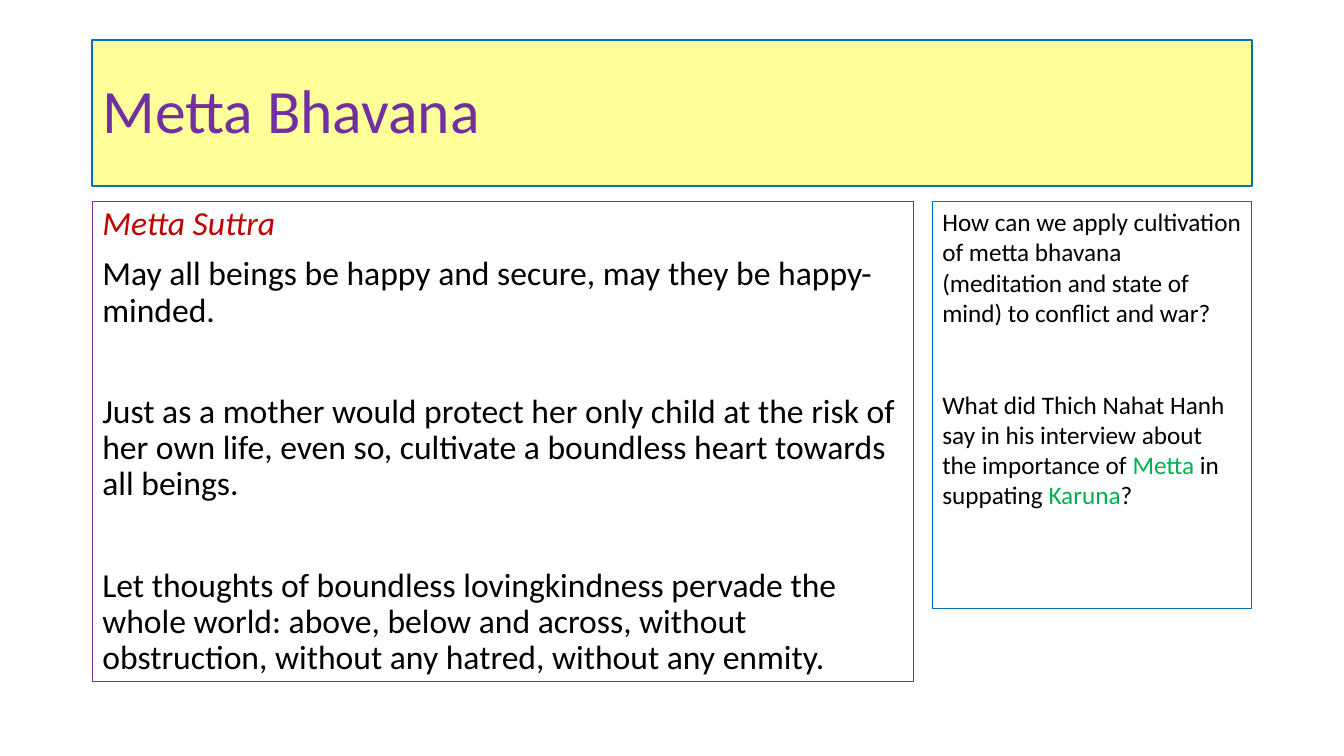
from dataclasses import dataclass

from pptx import Presentation
from pptx.dml.color import RGBColor
from pptx.enum.text import MSO_ANCHOR
from pptx.util import Inches, Pt


@dataclass(frozen=True)
class Theme:
    font: str = "Calibri"
    title_size: int = 44
    body_size: int = 24
    side_size: int = 18
    black: str = "000000"
    purple: str = "7030A0"
    blue: str = "0070C0"
    red: str = "C00000"
    green: str = "00B050"
    yellow: str = "FFFF99"


THEME = Theme()
COLUMNS, ROWS = 160, 90
LEFT, SIDE_LEFT, CONTENT_TOP = 11, 111, 24
SIDE_WIDTH = 38
FULL_WIDTH = SIDE_LEFT + SIDE_WIDTH - LEFT
LINE_SPACING = 0.9
PARAGRAPH_GAP, VERSE_GAP, QUESTION_GAP = 10, 46.4, 44

VERSES = [
    ("May all beings be happy and secure, may they be happy-minded.",
     PARAGRAPH_GAP),
    ("Just as a mother would protect her only child at the risk of her own "
     "life, even so, cultivate a boundless heart towards all beings.",
     VERSE_GAP),
    ("Let thoughts of boundless lovingkindness pervade the whole world: "
     "above, below and across, without obstruction, without any hatred, "
     "without any enmity.", VERSE_GAP),
]
FIRST_QUESTION = ("How can we apply cultivation of metta bhavana (meditation "
                  "and state of mind) to conflict and war?")
SECOND_QUESTION = [
    ("What did Thich Nahat Hanh say in his interview about the importance of ",
     THEME.black),
    ("Metta", THEME.green),
    (" in suppating ", THEME.black),
    ("Karuna", THEME.green),
    ("?", THEME.black),
]


def add_panel(slide, prs, left, top, width, height, line, weight=0.75):
    """Add an outlined text box placed in grid columns and rows."""
    col, row = prs.slide_width / COLUMNS, prs.slide_height / ROWS
    sp = slide.shapes.add_textbox(round(left * col), round(top * row),
                                  round(width * col), round(height * row))
    sp.line.color.rgb = RGBColor.from_string(line)
    sp.line.width = Pt(weight)
    sp.text_frame.word_wrap = True
    return sp


def add_paragraph(tf, runs, size, color=THEME.black, gap=0, spacing=1.0,
                  italic=False):
    """Write runs, a string or (text, colour) pairs, as the next paragraph."""
    p = tf.paragraphs[0]
    if p.runs:
        p = tf.add_paragraph()
    p.font.name, p.font.size, p.font.italic = THEME.font, Pt(size), italic
    p.space_before, p.line_spacing = Pt(gap), spacing
    if isinstance(runs, str):
        runs = [(runs, color)]
    for text, run_color in runs:
        r = p.add_run()
        r.text = text
        r.font.color.rgb = RGBColor.from_string(run_color)


def add_title(slide, prs):
    sp = add_panel(slide, prs, LEFT, 4.8, FULL_WIDTH, 17.4, THEME.blue, 1.5)
    sp.fill.solid()
    sp.fill.fore_color.rgb = RGBColor.from_string(THEME.yellow)
    sp.text_frame.vertical_anchor = MSO_ANCHOR.MIDDLE
    add_paragraph(sp.text_frame, "Metta Bhavana", THEME.title_size,
                  THEME.purple, spacing=LINE_SPACING)


def add_sutra(slide, prs):
    tf = add_panel(slide, prs, LEFT, CONTENT_TOP, 97.8, 57.1,
                   THEME.purple).text_frame
    add_paragraph(tf, "Metta Suttra", THEME.body_size, THEME.red,
                  spacing=LINE_SPACING, italic=True)
    for verse, gap in VERSES:
        add_paragraph(tf, verse, THEME.body_size, gap=gap,
                      spacing=LINE_SPACING)


def add_questions(slide, prs):
    tf = add_panel(slide, prs, SIDE_LEFT, CONTENT_TOP, SIDE_WIDTH, 48.5,
                   THEME.blue).text_frame
    add_paragraph(tf, FIRST_QUESTION, THEME.side_size)
    add_paragraph(tf, SECOND_QUESTION, THEME.side_size, gap=QUESTION_GAP)


def main():
    prs = Presentation()
    prs.slide_width, prs.slide_height = Inches(13.33), Inches(7.5)
    slide = prs.slides.add_slide(prs.slide_layouts[6])
    add_title(slide, prs)
    add_sutra(slide, prs)
    add_questions(slide, prs)
    prs.save("out.pptx")


if __name__ == "__main__":
    main()
